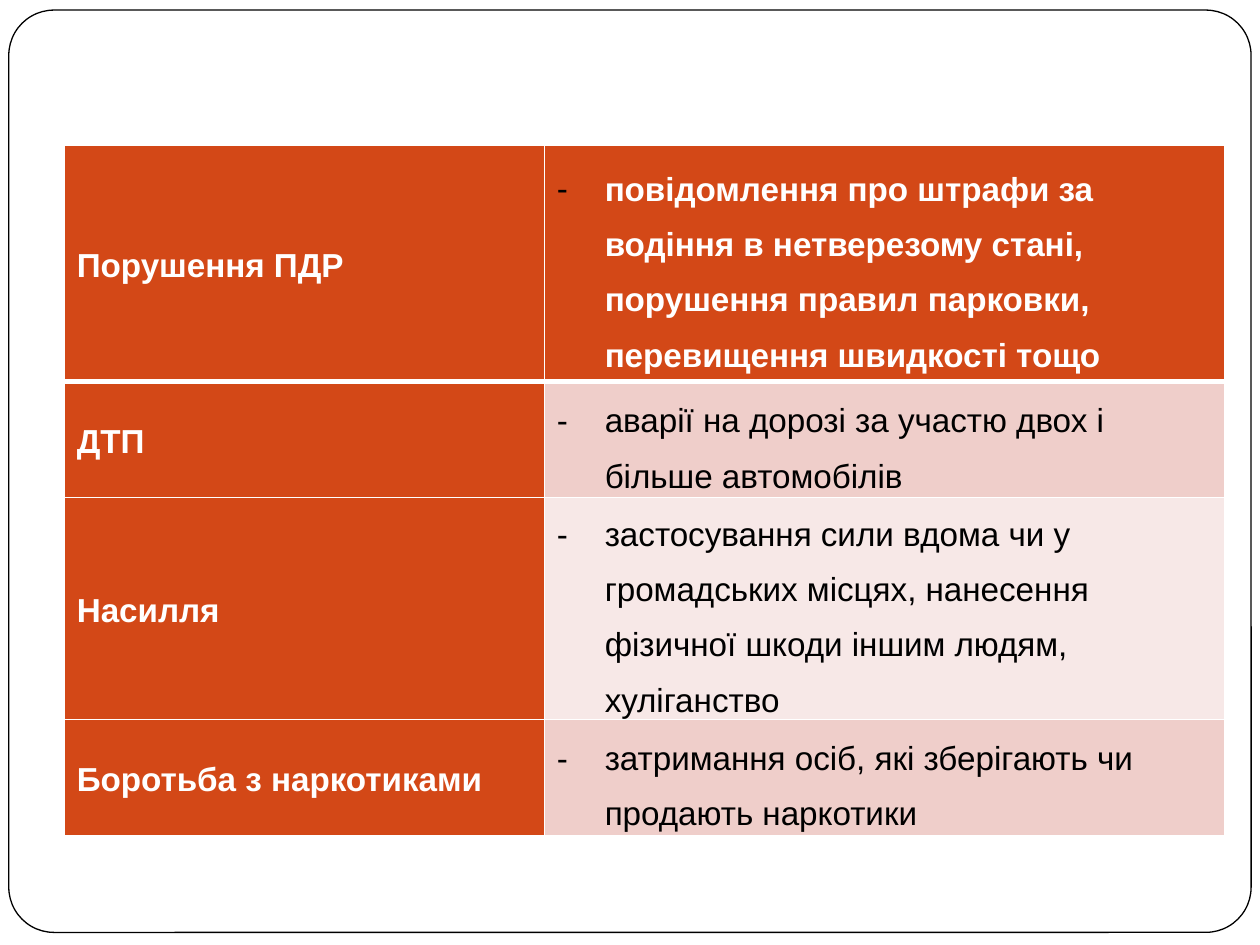
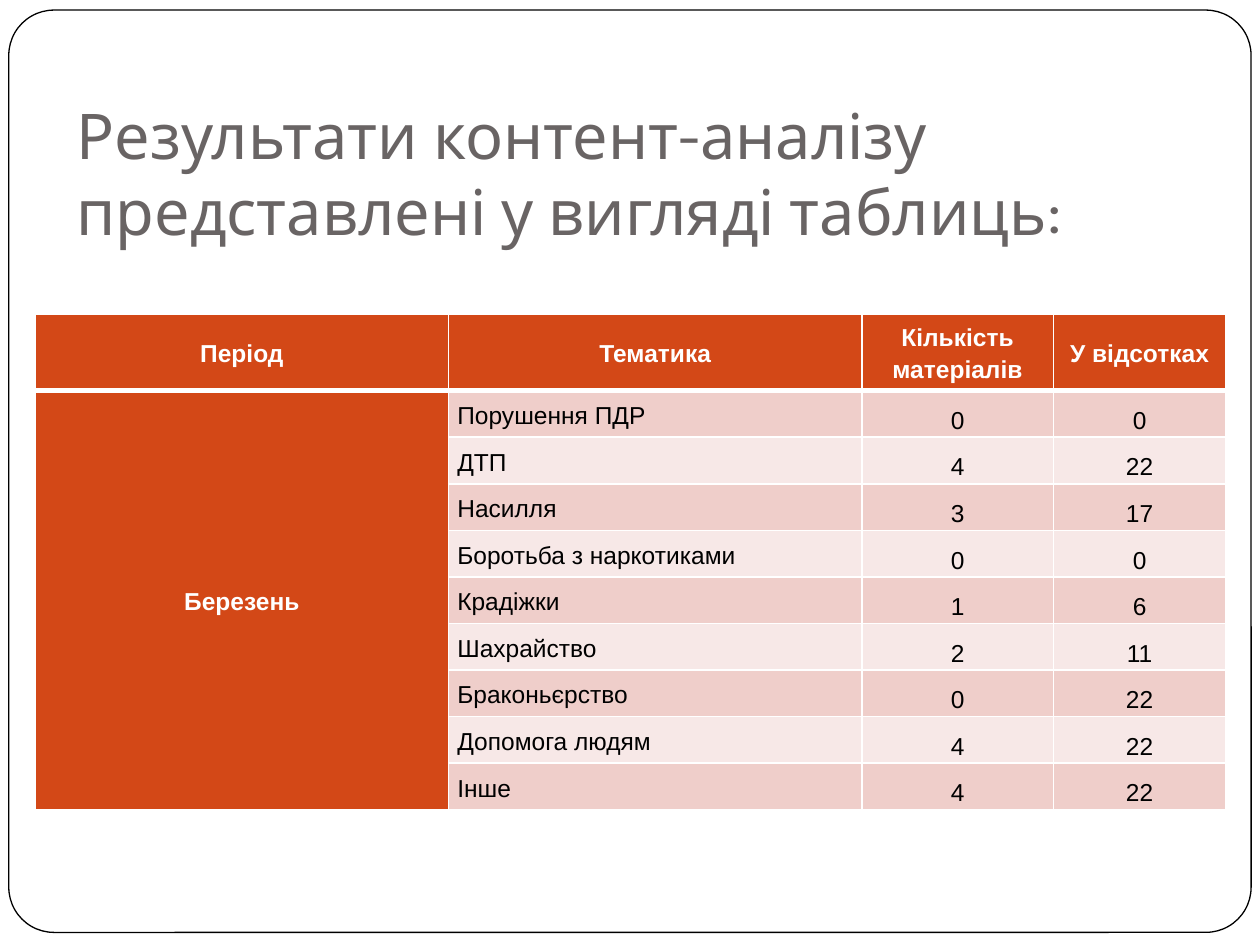
from lxml.etree import SubElement
from pptx import Presentation
from pptx.dml.color import RGBColor
from pptx.enum.shapes import MSO_SHAPE
from pptx.enum.text import MSO_ANCHOR, PP_ALIGN
from pptx.oxml.ns import qn
from pptx.util import Inches, Pt

COLORS = {
    "paper": "FFFFFF",
    "ink": "000000",
    "title": "696464",
    "accent": "D34817",
    "band_dark": "EFCECA",
    "band_light": "F7E8E7",
}
BODY_FONT, TITLE_FONT = "Arial", "Karla"

TOPICS = [
    ("Порушення ПДР", "повідомлення про штрафи за водіння в нетверезому стані, "
                      "порушення правил парковки, перевищення швидкості тощо"),
    ("ДТП", "аварії на дорозі за участю двох і більше автомобілів"),
    ("Насилля", "застосування сили вдома чи у громадських місцях, "
                "нанесення фізичної шкоди іншим людям, хуліганство"),
    ("Боротьба з наркотиками", "затримання осіб, які зберігають чи продають наркотики"),
]

RESULTS_TITLE = "Результати контент-аналізу представлені у вигляді таблиць:"
RESULTS_HEADER = ("Період", "Тематика", "Кількість матеріалів", "У відсотках")
MONTH = "Березень"
RESULTS = [
    ("Порушення ПДР", 0, 0),
    ("ДТП", 4, 22),
    ("Насилля", 3, 17),
    ("Боротьба з наркотиками", 0, 0),
    ("Крадіжки", 1, 6),
    ("Шахрайство", 2, 11),
    ("Браконьєрство", 0, 22),
    ("Допомога людям", 4, 22),
    ("Інше", 4, 22),
]


def rgb(name):
    return RGBColor.from_string(COLORS[name])


def write(frame, text, size, color, font=BODY_FONT, bold=False,
          align=PP_ALIGN.LEFT, spacing=1.0, dash=False):
    paragraph = frame.paragraphs[0]
    paragraph.alignment = align
    paragraph.line_spacing = spacing
    if dash:
        add_dash(paragraph)
    run = paragraph.add_run()
    run.text = text
    run.font.name = font
    run.font.size = Pt(size)
    run.font.bold = bold
    run.font.color.rgb = rgb(color)


def add_dash(paragraph, indent=Inches(0.38)):
    """Give the paragraph a hanging indent and a dash as its bullet."""
    props = paragraph._p.get_or_add_pPr()
    props.set("marL", str(indent))
    props.set("indent", str(-indent))
    bullet_color = SubElement(props, qn("a:buClr"))
    SubElement(bullet_color, qn("a:srgbClr"), val=COLORS["ink"])
    SubElement(props, qn("a:buFont"), typeface=BODY_FONT)
    SubElement(props, qn("a:buChar"), char="-")


def add_borders(cell, row):
    """Thin white borders, with a thick one under the first row."""
    widths = {"L": 1, "R": 1, "T": 3 if row == 1 else 1, "B": 3 if row == 0 else 1}
    props = cell._tc.get_or_add_tcPr()
    for side, width in widths.items():
        border = SubElement(props, qn(f"a:ln{side}"), w=str(Pt(width)))
        fill = SubElement(border, qn("a:solidFill"))
        SubElement(fill, qn("a:srgbClr"), val=COLORS["paper"])


def add_framed_slide(deck):
    slide = deck.slides.add_slide(deck.slide_layouts[6])
    border = slide.shapes.add_shape(MSO_SHAPE.ROUNDED_RECTANGLE, Inches(0.07),
                                    Inches(0.08), Inches(9.86), Inches(7.32))
    border.adjustments[0] = 0.049
    border.shadow.inherit = False
    border.fill.solid()
    border.fill.fore_color.rgb = rgb("paper")
    border.line.color.rgb = rgb("ink")
    border.line.width = Pt(0.75)
    return slide


def add_banded_table(slide, rows, left, top, widths, heights, side_margin, size, layout):
    """Accent first row and column, banded body; layout(row, col) gives the rest."""
    table = slide.shapes.add_table(
        len(rows), len(widths), Inches(left), Inches(top),
        Inches(sum(widths)), Inches(sum(heights))).table
    for column, width in zip(table.columns, widths):
        column.width = Inches(width)
    for table_row, height in zip(table.rows, heights):
        table_row.height = Inches(height)
    for r, values in enumerate(rows):
        for c, value in enumerate(values):
            cell = table.cell(r, c)
            heading = r == 0 or c == 0
            band = "band_dark" if r % 2 else "band_light"
            add_borders(cell, r)
            cell.fill.solid()
            cell.fill.fore_color.rgb = rgb("accent" if heading else band)
            cell.margin_left = cell.margin_right = Inches(side_margin)
            cell.margin_top = cell.margin_bottom = 0
            cell.vertical_anchor = MSO_ANCHOR.MIDDLE
            if value is not None:
                write(cell.text_frame, str(value), size=size, bold=heading,
                      color="paper" if heading else "ink", **layout(r, c))
    return table


def topic_layout(row, col):
    return {"spacing": 1.5, "dash": True} if col == 1 else {"spacing": 1.15}


def result_layout(row, col):
    is_topic = row > 0 and col == 1
    is_number = row > 0 and col > 1
    return {"align": PP_ALIGN.LEFT if is_topic else PP_ALIGN.CENTER,
            "spacing": 1.5 if is_number else 1.15}


def build_topics(deck):
    slide = add_framed_slide(deck)
    add_banded_table(slide, TOPICS, left=0.51, top=1.15, widths=[3.81, 5.4],
                     heights=[1.88, 0.92, 1.76, 0.92], side_margin=0.1,
                     size=19, layout=topic_layout)


def build_results(deck):
    slide = add_framed_slide(deck)
    title = slide.shapes.add_textbox(Inches(0.51), Inches(0.85),
                                     Inches(9), Inches(1.8)).text_frame
    title.word_wrap = True
    title.vertical_anchor = MSO_ANCHOR.BOTTOM
    title.margin_bottom = Inches(0.68)
    write(title, RESULTS_TITLE, size=36, color="title", font=TITLE_FONT)

    months = [MONTH] + [None] * (len(RESULTS) - 1)
    rows = [RESULTS_HEADER] + [(month, *result) for month, result in zip(months, RESULTS)]
    table = add_banded_table(slide, rows, left=0.28, top=2.49,
                             widths=[3.28, 3.28, 1.52, 1.37],
                             heights=[0.61] + [0.37] * len(RESULTS),
                             side_margin=0.07, size=14, layout=result_layout)
    table.cell(1, 0).merge(table.cell(len(RESULTS), 0))


def main():
    deck = Presentation()
    deck.slide_width, deck.slide_height = Inches(10), Inches(7.5)
    build_topics(deck)
    build_results(deck)
    deck.save("out.pptx")


if __name__ == "__main__":
    main()
